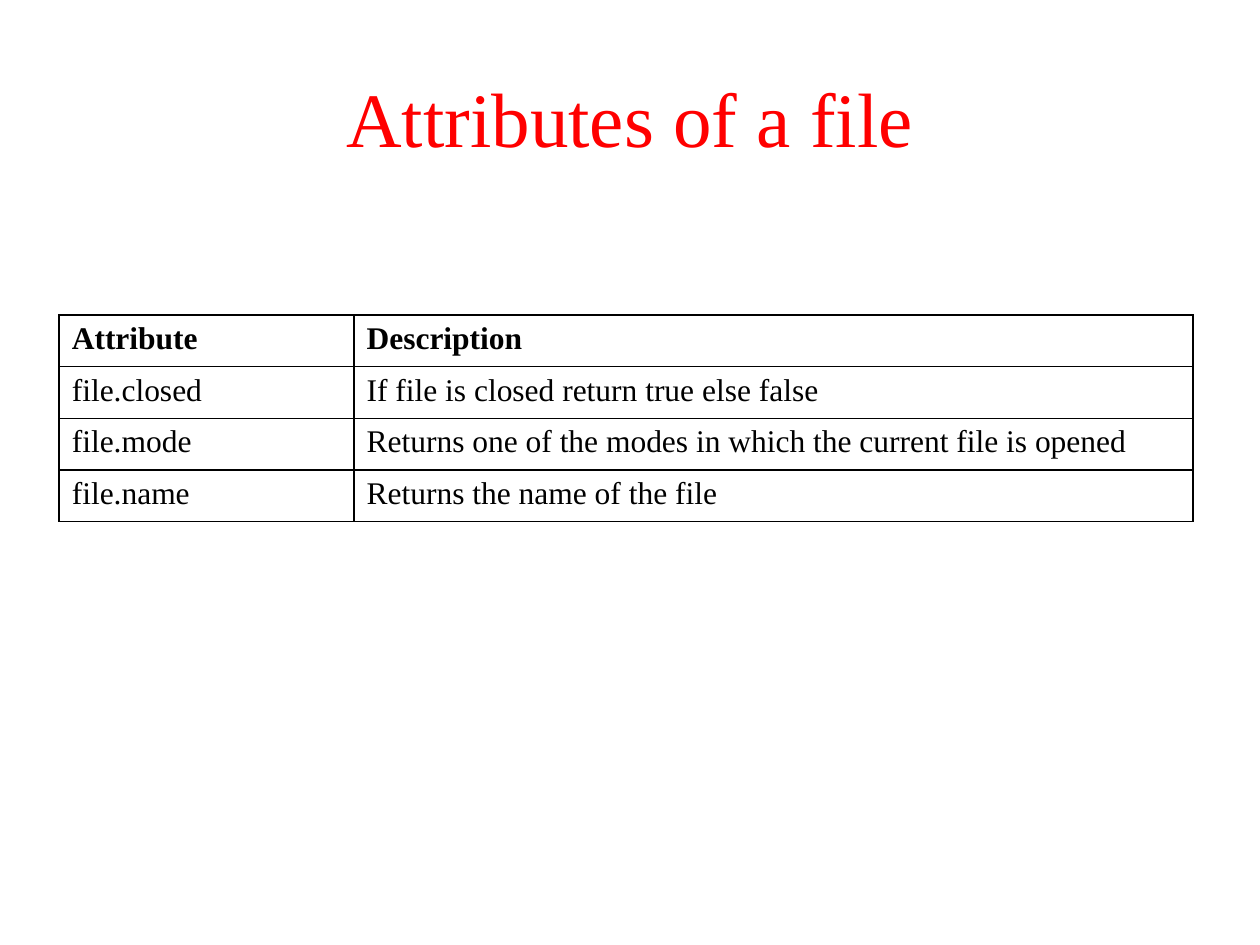
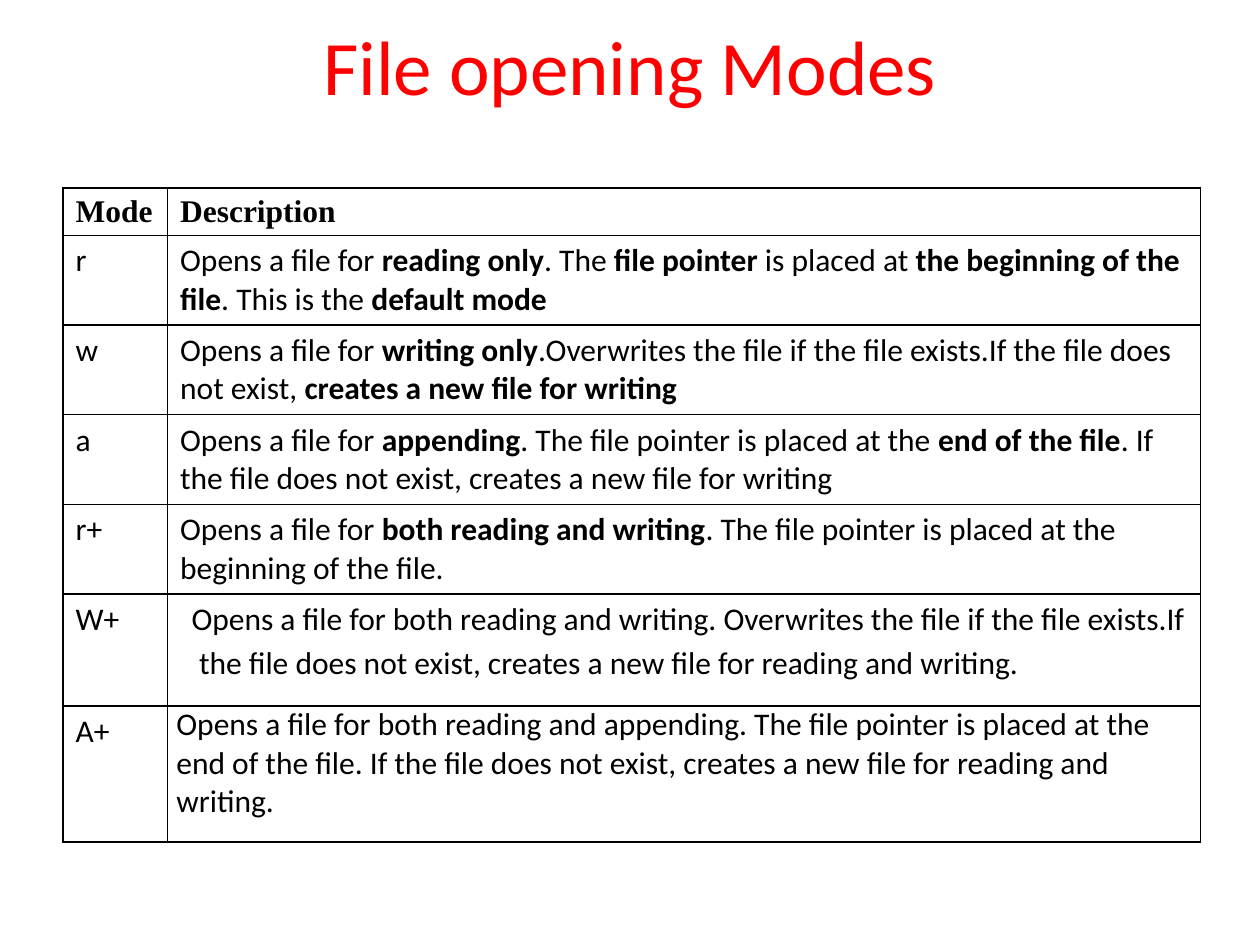
from dataclasses import dataclass

from lxml import etree
from pptx import Presentation
from pptx.dml.color import RGBColor
from pptx.enum.text import MSO_ANCHOR, PP_ALIGN
from pptx.oxml.ns import qn
from pptx.util import Inches, Pt

CENTER, MIDDLE = PP_ALIGN.CENTER, MSO_ANCHOR.MIDDLE
TITLE_ONLY = 5


@dataclass(frozen=True)
class Theme:
    title_color: RGBColor = RGBColor(0xFF, 0x00, 0x00)
    text_color: RGBColor = RGBColor(0x00, 0x00, 0x00)
    cell_fill: RGBColor = RGBColor(0xFF, 0xFF, 0xFF)
    title_size: Pt = Pt(44)
    text_size: Pt = Pt(18)
    border_width: Pt = Pt(1)
    serif: str = "Times New Roman"
    sans: str = "Calibri"


THEME = Theme()

ATTRIBUTES = [
    ("Attribute", "Description"),
    ("file.closed", "If file is closed return true else false"),
    ("file.mode", "Returns one of the modes in which the current file is opened"),
    ("file.name", "Returns the name of the file"),
]

# Double asterisks switch bold on and off; a line break starts a paragraph.
MODES = [
    ("Mode", "Description"),
    ("r", "Opens a file for **reading only**. The **file pointer** is placed at "
          "**the beginning of the file**. This is the **default mode**"),
    ("w", "Opens a file for **writing only**.Overwrites the file if the file exists."
          "If the file does not exist, **creates a new file for writing**"),
    ("a", "Opens a file for **appending**. The file pointer is placed at the "
          "**end of the file**. If the file does not exist, creates a new file for writing"),
    ("r+", "Opens a file for **both reading and writing**. The file pointer is placed "
           "at the beginning of the file."),
    ("W+", "Opens a file for both reading and writing. Overwrites the file if the file "
           "exists.If\nthe file does not exist, creates a new file for reading and writing."),
    ("A+", "Opens a file for both reading and appending. The file pointer is placed at "
           "the end of the file. If the file does not exist, creates a new file for "
           "reading and writing."),
]


def style_font(font, name, size, color, bold=False):
    font.name, font.size, font.bold = name, size, bold
    font.color.rgb = color


def add_title(slide, text, font_name, box):
    title = slide.shapes.title
    title.left, title.top, title.width, title.height = map(Inches, box)
    tf = title.text_frame
    tf.vertical_anchor = MIDDLE
    p = tf.paragraphs[0]
    p.alignment = CENTER
    r = p.add_run()
    r.text = text
    style_font(r.font, font_name, THEME.title_size, THEME.title_color)


def add_borders(cell):
    tc_pr = cell._tc.get_or_add_tcPr()
    for i, side in enumerate(("lnL", "lnR", "lnT", "lnB")):
        ln = etree.Element(qn(f"a:{side}"), w=str(THEME.border_width))
        fill = etree.SubElement(ln, qn("a:solidFill"))
        etree.SubElement(fill, qn("a:srgbClr"), val=str(THEME.text_color))
        tc_pr.insert(i, ln)


def fill_cell(cell, text, font_name, header):
    cell.fill.solid()
    cell.fill.fore_color.rgb = THEME.cell_fill
    add_borders(cell)
    tf = cell.text_frame
    for i, line in enumerate(text.split("\n")):
        p = tf.add_paragraph() if i else tf.paragraphs[0]
        for j, part in enumerate(line.split("**")):
            if part:
                r = p.add_run()
                r.text = part
                style_font(r.font, font_name, THEME.text_size, THEME.text_color,
                           header or j % 2 == 1)


def add_grid(slide, rows, left, top, widths, heights, body_font):
    frame = slide.shapes.add_table(len(rows), len(widths), Inches(left), Inches(top),
                                   Inches(sum(widths)), Inches(sum(heights)))
    table = frame.table
    table.first_row = table.horz_banding = False
    for column, width in zip(table.columns, widths):
        column.width = Inches(width)
    for i, (row, height, texts) in enumerate(zip(table.rows, heights, rows)):
        row.height = Inches(height)
        font_name = body_font if i else THEME.serif
        for cell, text in zip(row.cells, texts):
            fill_cell(cell, text, font_name, header=i == 0)
    return table


def indent_cell(cell, indents, line_spacing=None):
    """Replace the cell's margins by one left indent per paragraph."""
    cell.margin_left = cell.margin_right = cell.margin_top = cell.margin_bottom = 0
    for p, indent in zip(cell.text_frame.paragraphs, indents):
        p._p.get_or_add_pPr().set("marL", str(Inches(indent)))
        p.line_spacing = line_spacing


def add_attributes_slide(prs):
    slide = prs.slides.add_slide(prs.slide_layouts[TITLE_ONLY])
    add_title(slide, "Attributes of a file", THEME.serif, (0.5, 0.3, 9, 1.25))
    add_grid(slide, ATTRIBUTES, 0.47, 2.5, (2.34, 6.66),
             [0.41] * len(ATTRIBUTES), THEME.serif)


def add_modes_slide(prs):
    slide = prs.slides.add_slide(prs.slide_layouts[TITLE_ONLY])
    add_title(slide, "File opening Modes", THEME.sans, (0.5, 0, 9, 1.02))
    table = add_grid(slide, MODES, 0.5, 1.49, (0.83, 8.2),
                     [0.38] + [0.71] * 4 + [0.89, 1.08], THEME.sans)
    indent_cell(table.cell(5, 1), (0.19, 0.25), Pt(25.6))
    indent_cell(table.cell(6, 1), (0.07,))


def main():
    prs = Presentation()
    prs.slide_width, prs.slide_height = Inches(10), Inches(7.5)
    add_attributes_slide(prs)
    add_modes_slide(prs)
    prs.save("out.pptx")


if __name__ == "__main__":
    main()
